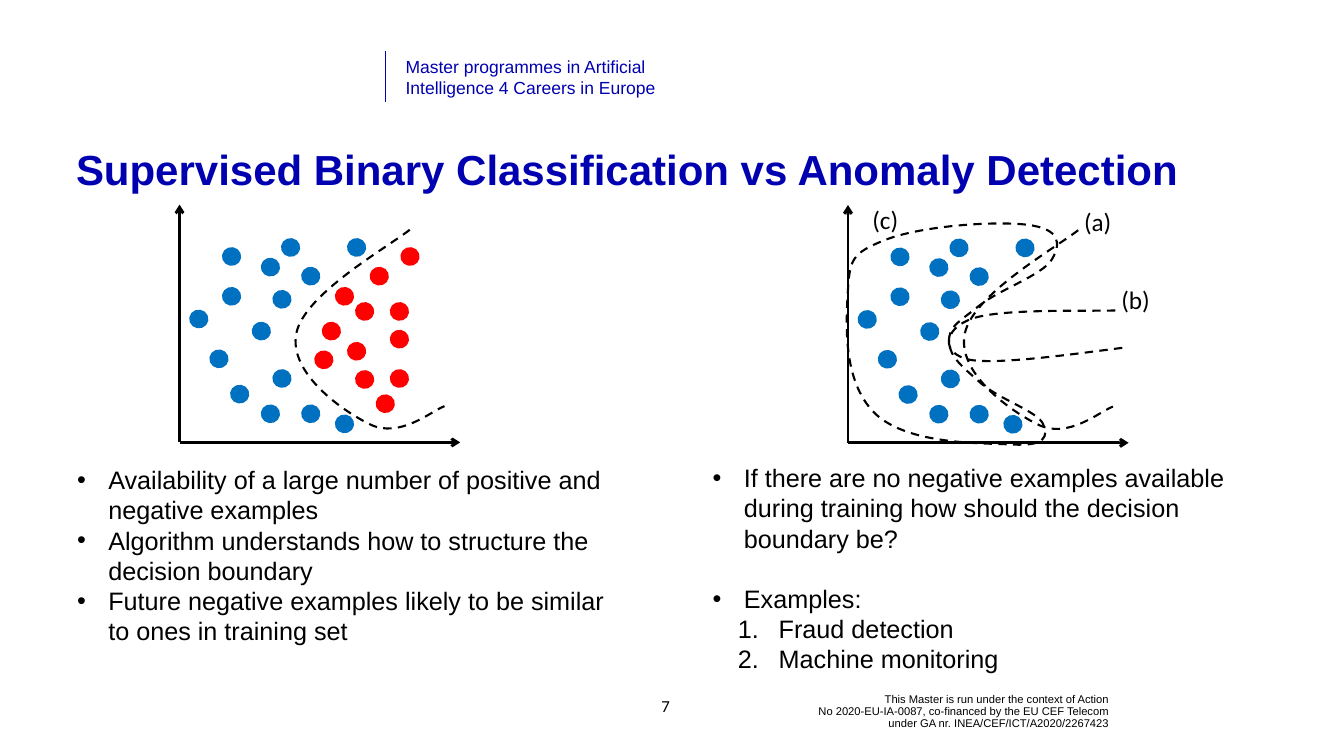
from lxml import etree
from pptx import Presentation
from pptx.dml.color import RGBColor
from pptx.enum.dml import MSO_LINE
from pptx.enum.shapes import MSO_CONNECTOR, MSO_SHAPE
from pptx.enum.text import MSO_ANCHOR, MSO_AUTO_SIZE, PP_ALIGN
from pptx.oxml.ns import qn
from pptx.util import Pt

DASH = MSO_LINE.DASH
STRAIGHT = MSO_CONNECTOR.STRAIGHT
OVAL = MSO_SHAPE.OVAL
TOP, MIDDLE = MSO_ANCHOR.TOP, MSO_ANCHOR.MIDDLE
GROW, FIXED = MSO_AUTO_SIZE.SHAPE_TO_FIT_TEXT, MSO_AUTO_SIZE.NONE
LEFT, CENTER, RIGHT = PP_ALIGN.LEFT, PP_ALIGN.CENTER, PP_ALIGN.RIGHT

NAVY, BLACK, BLUE, RED = "0000B0", "000000", "0070C0", "FF0000"
DOT_WIDTH, DOT_HEIGHT = 25.2, 24.5
BLANK_LINE = 43
BULLET = (44.6, -44.6, "buChar", {"char": "•"})
NUMBER = (94.3, -58.3, "buAutoNum", {"type": "arabicPeriod"})

TITLE = "Supervised Binary Classification vs Anomaly Detection"
PROGRAMME = ["Master programmes in Artificial", "Intelligence 4 Careers in Europe"]
FUNDING = [
    "This Master is run under the context of Action",
    "No 2020-EU-IA-0087, co-financed by the EU CEF Telecom",
    "under GA nr. INEA/CEF/ICT/A2020/2267423",
]
SUPERVISED = [
    (BULLET, 0, "Availability of a large number of positive and negative examples"),
    (BULLET, 0, "Algorithm understands how to structure the decision boundary"),
    (BULLET, 0, "Future negative examples likely to be similar to ones in training set"),
]
ANOMALY = [
    (BULLET, 0, "If there are no negative examples available during training "
                "how should the decision boundary be?"),
    (BULLET, BLANK_LINE, "Examples:"),
    (NUMBER, 0, "Fraud detection"),
    (NUMBER, 0, "Machine monitoring"),
]
CURVE_LABELS = [("(a)", 1541.5, 290.9), ("(b)", 1594.8, 403.2), ("(c)", 1239.1, 288.7)]

POSITIVES = [
    (300.2, 500.4), (329.8, 550.8), (390.2, 528.5), (431.3, 578.9), (360.7, 460.8),
    (318.2, 411.1), (373.7, 369.4), (431.3, 382.3), (318.2, 354.2), (373.7, 578.9),
    (271.4, 443.5), (390.2, 415.4), (402.5, 341.3), (496.8, 341.3), (479.5, 593.3),
]
NEGATIVES = [
    (460.8, 460.8), (508.3, 432.7), (496.8, 489.6), (558, 472.3), (508.3, 529.9),
    (529.2, 382.3), (558, 528.5), (558, 432.7), (573.1, 354.2), (479.5, 411.1),
    (450, 501.8), (537.8, 564.5),
]
AXES = [(256.5, 632, 256.5, 292.3), (256.5, 632, 657.4, 632)]
ANOMALY_SHIFT = (954.9, 0.6)

BOUNDARY_A = ((422.6, 328.3, 212.4, 283.7), [
    (585.4, 328.3), (550.8, 355), (434.9, 420.5), (423.4, 475.9), (411.8, 531.4),
    (486, 585.4), (528.5, 606.2), (571, 627.1), (615.6, 587.5), (635, 580.3),
])
BOUNDARY_B = ((1355.8, 443.5, 255.6, 72), [
    (1593.4, 443.5), (1552.3, 445), (1430.6, 440.6), (1389.6, 455), (1347.8, 468.7),
    (1342.1, 505.4), (1386, 514.1), (1430.6, 522), (1566, 501.1), (1610.6, 496.1),
])
BOUNDARY_C = ((1209.6, 319.7, 300.2, 316.1), [
    (1266.5, 342), (1318.3, 322.6), (1420.6, 315.4), (1467.4, 321.1), (1514.9, 326.9),
    (1516.3, 347.8), (1502.6, 370.8), (1488.2, 393.8), (1426.3, 414), (1397.5, 437.8),
    (1368, 461.5), (1355, 466.6), (1355.8, 488.9), (1357.2, 510.5), (1375.2, 524.2),
    (1401.8, 547.9), (1429.2, 571), (1481, 587.5), (1489.7, 604.8), (1498.3, 622.8),
    (1494, 637.9), (1446.5, 635), (1399, 632.9), (1299.6, 635), (1252.1, 592.6),
    (1205.3, 549.4), (1208.2, 470.2), (1211, 420.5), (1213.9, 370.1), (1215.4, 362.2),
    (1266.5, 342),
])


def color(value):
    return RGBColor.from_string(value)


def add_box(page, place, anchor=TOP, size_mode=FIXED, inset=None):
    box = page.shapes.add_textbox(*map(Pt, place))
    frame = box.text_frame
    frame.word_wrap = True
    frame.auto_size = size_mode
    frame.vertical_anchor = anchor
    if inset is not None:
        frame.margin_left = frame.margin_right = Pt(inset)
        frame.margin_top = frame.margin_bottom = Pt(inset)
    return frame


def add_span(para, text, size, fill=BLACK, font="Arial", bold=False):
    span = para.add_run()
    span.text = text
    span.font.size = Pt(size)
    span.font.name = font
    span.font.bold = bold
    span.font.color.rgb = color(fill)


def add_lines(para, lines, size, **style):
    for index, line in enumerate(lines):
        if index:
            para.add_line_break()
        add_span(para, line, size, **style)


def add_list(page, place, items):
    frame = add_box(page, place, MIDDLE, GROW, 4.3)
    for index, (marker, gap, text) in enumerate(items):
        para = frame.add_paragraph() if index else frame.paragraphs[0]
        margin, indent, tag, attributes = marker
        properties = para._p.get_or_add_pPr()
        properties.set("marL", str(Pt(margin)))
        properties.set("indent", str(Pt(indent)))
        etree.SubElement(properties, qn("a:buFont"), typeface="Arial")
        etree.SubElement(properties, qn(f"a:{tag}"), attributes)
        if gap:
            para.space_before = Pt(gap)
        add_span(para, text, 36)


def add_line(shapes, ends, fill, width, arrow=False):
    line = shapes.add_connector(STRAIGHT, *map(Pt, ends))
    line.line.color.rgb = color(fill)
    line.line.width = Pt(width)
    if arrow:
        etree.SubElement(line.line._get_or_add_ln(), qn("a:tailEnd"), type="arrow")
    etree.SubElement(line._element.spPr, qn("a:effectLst"))


def add_plot(page, shift, dot_sets):
    dx, dy = shift
    plot = page.shapes.add_group_shape()
    for x1, y1, x2, y2 in AXES:
        add_line(plot.shapes, (x1 + dx, y1 + dy, x2 + dx, y2 + dy), BLACK, 4, True)
    for fill, dots in dot_sets:
        for x, y in dots:
            dot = plot.shapes.add_shape(
                OVAL, Pt(x + dx), Pt(y + dy), Pt(DOT_WIDTH), Pt(DOT_HEIGHT))
            dot.rotation = 9
            dot.shadow.inherit = False
            dot.fill.solid()
            dot.fill.fore_color.rgb = color(fill)
            dot.line.color.rgb = color(fill)
            dot.line.width = Pt(2.25)


def add_boundary(page, boundary, shift=(0, 0)):
    (left, top, width, height), knots = boundary
    builder = page.shapes.build_freeform(Pt(left), Pt(top), scale=1.0)
    builder.add_line_segments([(Pt(left + width), Pt(top + height))], close=False)
    curve = builder.convert_to_shape(Pt(shift[0]), Pt(shift[1]))
    outline = curve._element.spPr.find(f".//{qn('a:path')}")
    for step in list(outline):
        outline.remove(step)
    for index, (x, y) in enumerate(knots):
        if index % 3 == 1:
            step = etree.SubElement(outline, qn("a:cubicBezTo"))
        elif index == 0:
            step = etree.SubElement(outline, qn("a:moveTo"))
        etree.SubElement(step, qn("a:pt"), x=str(Pt(x - left)), y=str(Pt(y - top)))
    if knots[0] == knots[-1]:
        etree.SubElement(outline, qn("a:close"))
    curve.shadow.inherit = False
    curve.fill.background()
    curve.line.color.rgb = color(BLACK)
    curve.line.width = Pt(3)
    curve.line.dash_style = DASH


def main():
    """Build the slide comparing binary classification with anomaly detection."""
    deck = Presentation()
    deck.slide_width, deck.slide_height = Pt(1920), Pt(1080)
    page = deck.slides.add_slide(deck.slide_layouts[6])

    para = add_box(page, (1081.4, 989.3, 509.8, 54.7), MIDDLE).paragraphs[0]
    para.alignment = RIGHT
    para.line_spacing = 0.9
    add_lines(para, FUNDING, 16)
    add_line(page.shapes, (550.8, 72.7, 550.8, 146.2), NAVY, 0.5)
    para = add_box(page, (572.4, 76.3, 458.6, 67.7), TOP, GROW).paragraphs[0]
    add_lines(para, PROGRAMME, 25, fill=NAVY)
    para = add_box(page, (910.8, 979.9, 79.9, 57.6), MIDDLE).paragraphs[0]
    para.alignment = CENTER
    add_span(para, "7", 24, font="Calibri")
    para = add_box(page, (101.5, 203.8, 1699.9, 84.2)).paragraphs[0]
    para.alignment = LEFT
    para.line_spacing = Pt(70)
    add_span(para, TITLE, 60, NAVY, bold=True)

    add_list(page, (105.8, 658.1, 799.9, 270), SUPERVISED)
    add_list(page, (1013.8, 655.2, 799.9, 313.2), ANOMALY)

    add_boundary(page, BOUNDARY_A)
    add_plot(page, (0, 0), [(BLUE, POSITIVES), (RED, NEGATIVES)])
    add_boundary(page, BOUNDARY_A, ANOMALY_SHIFT)
    add_plot(page, ANOMALY_SHIFT, [(BLUE, POSITIVES)])
    add_boundary(page, BOUNDARY_B)
    add_boundary(page, BOUNDARY_C)
    for text, x, y in CURVE_LABELS:
        para = add_box(page, (x, y, 78.5, 51.1), TOP, GROW).paragraphs[0]
        add_span(para, text, 36, font="Calibri")

    deck.save("out.pptx")


if __name__ == "__main__":
    main()
